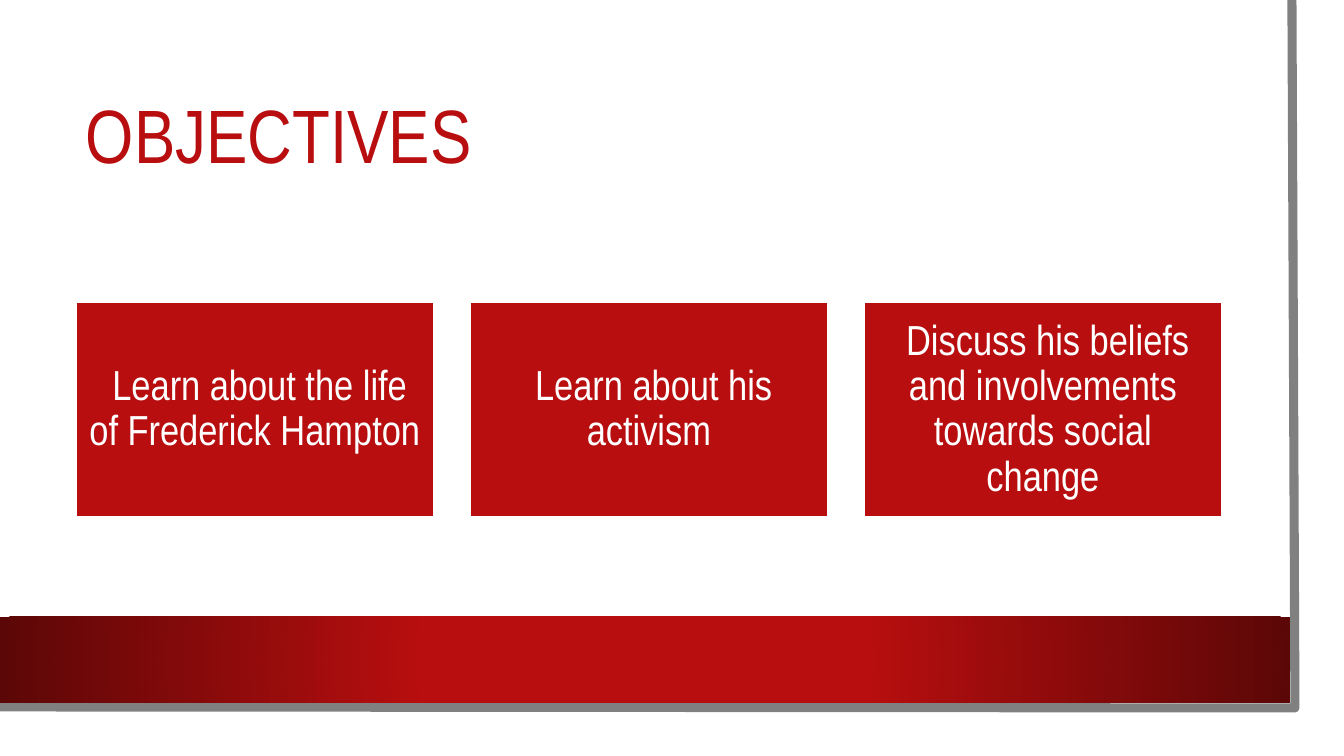
from lxml import etree
from pptx import Presentation, util as u
from pptx.dml.color import RGBColor
from pptx.enum import shapes, text
from pptx.oxml import ns

# Content
TITLE = "OBJECTIVES"
GOALS = [
    " Learn about the life of Frederick Hampton",
    " Learn about his activism",
    " Discuss his beliefs and involvements towards social change",
]

# Theme
THEME = {
    "font": "Arial Narrow", "title": 54, "body": 30,
    "red": "B80E0F", "dark": "5C0707", "gray": "808080", "white": "FFFFFF",
}

# Layout in px
PAGE = (1344, 756)
HEAD = (76, 76, 1146, 127)
BAND = (0, 617, 1290, 86)
EDGE = [(1292, 0), (1295, 708), (-3, 707)]
CARD = (76, 302, 358, 215)
STEP = 394


def px(n):
    return u.Emu(round(n * 914400 / 100.8))


def color(name):
    return RGBColor.from_string(THEME[name])


def write(shape, words, size, tone, align, inset):
    frame = shape.text_frame
    frame.word_wrap = True
    frame.vertical_anchor = text.MSO_ANCHOR.MIDDLE
    frame.margin_left = frame.margin_right = px(inset)
    frame.margin_top = frame.margin_bottom = px(inset)
    para = frame.paragraphs[0]
    para.text = words
    para.alignment = align
    para.line_spacing = 0.9
    para.font.name = THEME["font"]
    para.font.size = u.Pt(THEME[size])
    para.font.color.rgb = color(tone)


def block(slide, box):
    shape = slide.shapes.add_shape(shapes.MSO_SHAPE.RECTANGLE, *map(px, box))
    shape.shadow.inherit = False
    return shape


def draw_edge(slide):
    points = [(px(x), px(y)) for x, y in EDGE]
    build = slide.shapes.build_freeform(*points[0])
    build.add_line_segments(points[1:], close=False)
    edge = build.convert_to_shape()
    edge.shadow.inherit = False
    edge.fill.background()
    edge.line.color.rgb = color("gray")
    edge.line.width = u.Pt(6.5)


def draw_band(slide):
    band = block(slide, BAND)
    band.line.fill.background()
    # Radial fill, red in the middle and dark at the ends
    grad = etree.fromstring(
        f'<a:gradFill {ns.nsdecls("a")} rotWithShape="1"><a:gsLst>'
        f'<a:gs pos="34000"><a:srgbClr val="{THEME["red"]}"/></a:gs>'
        f'<a:gs pos="100000"><a:srgbClr val="{THEME["dark"]}"/></a:gs>'
        '</a:gsLst><a:path path="circle">'
        '<a:fillToRect l="50000" t="50000" r="50000" b="50000"/>'
        '</a:path></a:gradFill>')
    band.element.spPr.find(ns.qn("a:prstGeom")).addnext(grad)


def draw_cards(slide):
    left, top, width, height = CARD
    for i, goal in enumerate(GOALS):
        card = block(slide, (left + i * STEP, top, width, height))
        card.fill.solid()
        card.fill.fore_color.rgb = color("red")
        card.line.color.rgb = color("white")
        card.line.width = u.Pt(1.5)
        write(card, goal, "body", "white", text.PP_ALIGN.CENTER, 12)


def main():
    deck = Presentation()
    deck.slide_width, deck.slide_height = map(px, PAGE)
    slide = deck.slides.add_slide(deck.slide_layouts[6])
    # Frame
    draw_edge(slide)
    draw_band(slide)
    # Title
    head = slide.shapes.add_textbox(*map(px, HEAD))
    write(head, TITLE, "title", "red", text.PP_ALIGN.LEFT, 10)
    # Goals
    draw_cards(slide)
    deck.save("out.pptx")


if __name__ == "__main__":
    main()
